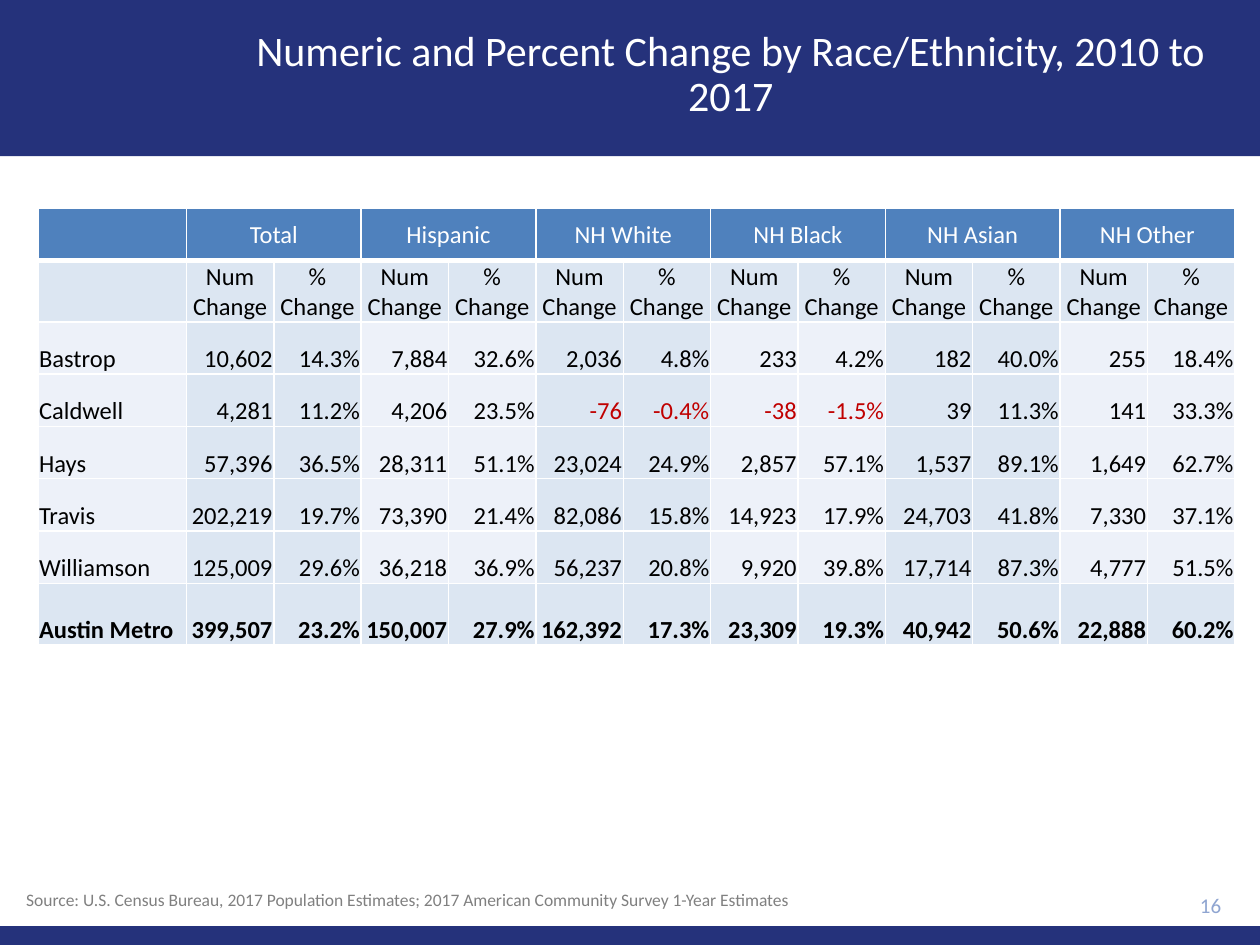
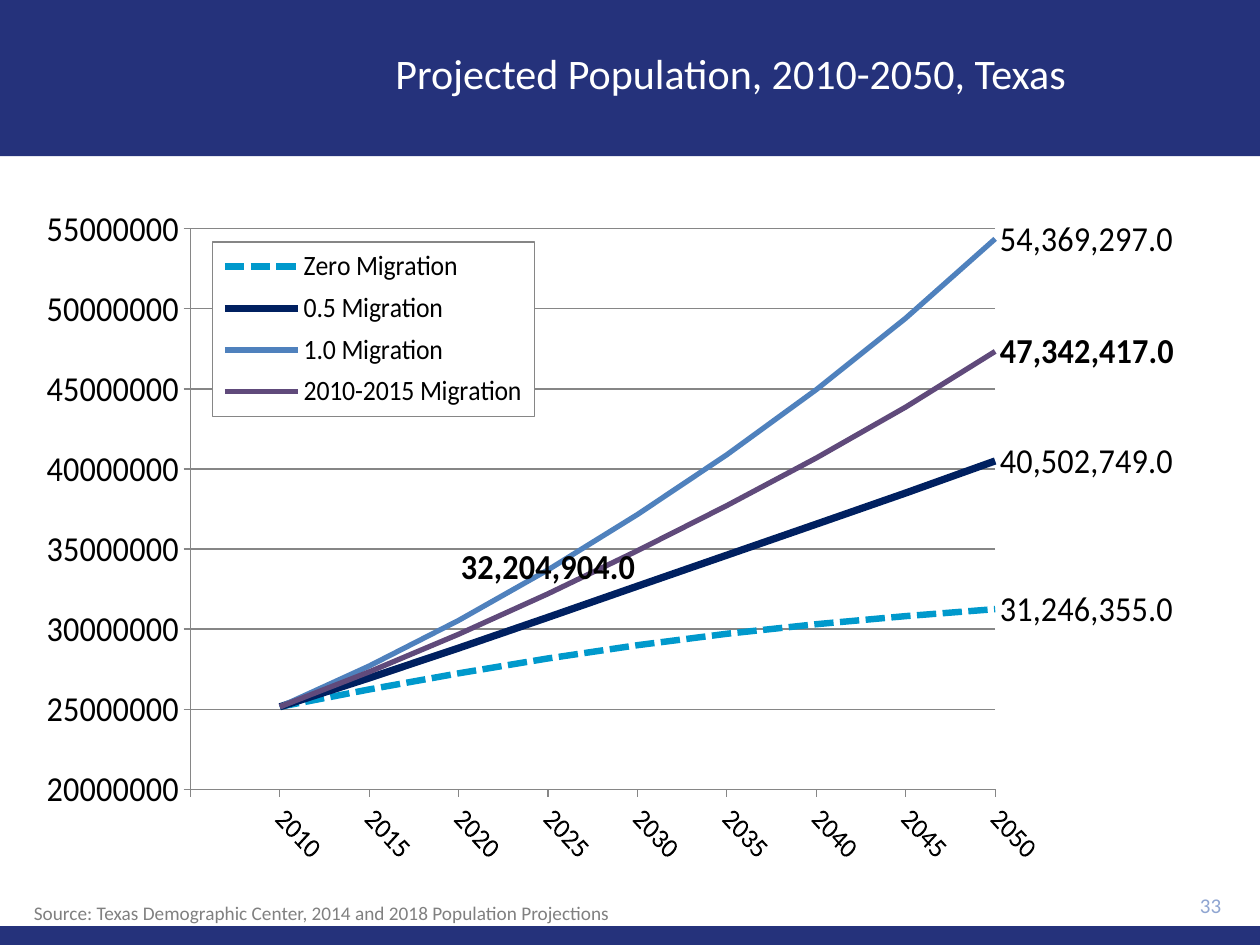
from lxml import etree
from pptx import Presentation
from pptx.chart.data import CategoryChartData
from pptx.dml.color import RGBColor
from pptx.enum import chart as ch, dml, shapes, text
from pptx.oxml import parse_xml
from pptx.oxml.ns import nsdecls, qn
from pptx.util import Inches, Pt

NAVY = RGBColor(0x25, 0x32, 0x7B)
WHITE = RGBColor(0xFF, 0xFF, 0xFF)
BLACK = RGBColor(0, 0, 0)
RED = RGBColor(0xC0, 0, 0)
GREY = RGBColor(0x80, 0x80, 0x80)
AXIS_GREY = RGBColor(0x86, 0x86, 0x86)
NUMBER_BLUE = RGBColor(0x8F, 0xA5, 0xD1)
BLUE = RGBColor(0x4F, 0x81, 0xBD)
PALE = RGBColor(0xDC, 0xE6, 0xF2)
PALER = RGBColor(0xED, 0xF1, 0xF9)
CYAN = RGBColor(0, 0x99, 0xCC)
DARK = RGBColor(0, 0x20, 0x60)
PURPLE = RGBColor(0x60, 0x4A, 0x7B)
FONT = "Calibri"
ALIGN = text.PP_ALIGN
ANCHOR = text.MSO_ANCHOR


def write(p, words, size, color, align=ALIGN.LEFT, bold=False):
    p.alignment = align
    r = p.add_run()
    r.text = words
    r.font.name, r.font.size, r.font.bold = FONT, Pt(size), bold
    r.font.color.rgb = color


def place(before, x, y, w, h, inner=False):
    """Give a chart part a manual layout, put after the element `before`."""
    target = '<c:layoutTarget val="inner"/>' if inner else ""
    values = "".join(f'<c:{tag} val="{v}"/>' for tag, v in zip("xywh", (x, y, w, h)))
    return parse_xml(
        f'<c:layout {nsdecls("c")}><c:manualLayout>{target}<c:xMode val="edge"/>'
        f'<c:yMode val="edge"/>{values}</c:manualLayout></c:layout>'
    ) if before is None else before.addnext(place(None, x, y, w, h, inner))


prs = Presentation()
prs.slide_width, prs.slide_height = Inches(10), Inches(7.5)
layout = prs.slide_layouts[5]

# Titles, sources and page numbers
pages = [
    ("Numeric and Percent Change by Race/Ethnicity, 2010 to 2017", "16",
     "Source: U.S. Census Bureau, 2017 Population Estimates; "
     "2017 American Community Survey 1-Year Estimates", 10, (0.11, 7.01, 6.32, 0.27)),
    ("Projected Population, 2010-2050, Texas", "33",
     "Source: Texas Demographic Center, 2014 and 2018 Population Projections",
     11, (0.17, 7.1, 4.81, 0.29)),
]
for title, number, source, source_size, source_box in pages:
    s = prs.slides.add_slide(layout)
    sp = s.shapes.title
    sp.left, sp.top, sp.width, sp.height = map(Inches, (1.7, 0.1, 8.2, 1))
    tf = sp.text_frame
    tf.vertical_anchor = ANCHOR.MIDDLE
    tf.auto_size = text.MSO_AUTO_SIZE.NONE
    tf.paragraphs[0].line_spacing = 0.9
    write(tf.paragraphs[0], title, 24, WHITE, ALIGN.CENTER)

    tf = s.shapes.add_textbox(*map(Inches, (8.9, 7.01, 0.89, 0.34))).text_frame
    tf.word_wrap = True
    tf.vertical_anchor = ANCHOR.MIDDLE
    write(tf.paragraphs[0], number, 12, NUMBER_BLUE, ALIGN.RIGHT)

    tf = s.shapes.add_textbox(*map(Inches, source_box)).text_frame
    tf.word_wrap = False
    tf.auto_size = text.MSO_AUTO_SIZE.SHAPE_TO_FIT_TEXT
    write(tf.paragraphs[0], source, source_size, GREY)

# Navy bands, moved to the shared layout behind its placeholders
table_slide, chart_slide = prs.slides
for top, height in ((0, 1.24), (7.35, 0.15)):
    sp = table_slide.shapes.add_shape(
        shapes.MSO_SHAPE.RECTANGLE, 0, Inches(top), Inches(10), Inches(height))
    sp.shadow.inherit = False
    sp.fill.solid()
    sp.fill.fore_color.rgb = NAVY
    sp.line.fill.background()
    layout.shapes.element.insert(2, sp.element)

# Table of changes by group
groups = ["Total", "Hispanic", "NH White", "NH Black", "NH Asian", "NH Other"]
header = [""]
for group in groups:
    header += [group, ""]
rows = [
    header,
    [""] + ["Num Change", "% Change"] * len(groups),
    ["Bastrop", "10,602", "14.3%", "7,884", "32.6%", "2,036", "4.8%",
     "233", "4.2%", "182", "40.0%", "255", "18.4%"],
    ["Caldwell", "4,281", "11.2%", "4,206", "23.5%", "-76", "-0.4%",
     "-38", "-1.5%", "39", "11.3%", "141", "33.3%"],
    ["Hays", "57,396", "36.5%", "28,311", "51.1%", "23,024", "24.9%",
     "2,857", "57.1%", "1,537", "89.1%", "1,649", "62.7%"],
    ["Travis", "202,219", "19.7%", "73,390", "21.4%", "82,086", "15.8%",
     "14,923", "17.9%", "24,703", "41.8%", "7,330", "37.1%"],
    ["Williamson", "125,009", "29.6%", "36,218", "36.9%", "56,237", "20.8%",
     "9,920", "39.8%", "17,714", "87.3%", "4,777", "51.5%"],
    ["Austin Metro", "399,507", "23.2%", "150,007", "27.9%", "162,392", "17.3%",
     "23,309", "19.3%", "40,942", "50.6%", "22,888", "60.2%"],
]
last = len(rows) - 1
table = table_slide.shapes.add_table(
    len(rows), len(header), *map(Inches, (0.3, 1.65, 9.5, 3.49))).table
for c, column in enumerate(table.columns):
    column.width = Inches(1.18 if c == 0 else (9.5 - 1.18) / 12)
for i, row in enumerate(table.rows):
    row.height = Inches(0.49 if i in (1, last) else 0.415)

for i, row in enumerate(rows):
    for c, words in enumerate(row):
        cell = table.cell(i, c)
        cell.margin_left = cell.margin_right = cell.margin_top = Inches(0.01)
        cell.margin_bottom = 0
        cell.vertical_anchor = ANCHOR.MIDDLE if i < 2 else ANCHOR.BOTTOM

        # White borders, thick under the header row
        tcPr = cell._tc.get_or_add_tcPr()
        for side in "LRTB":
            thick = (i, side) in ((0, "B"), (1, "T"))
            tcPr.append(parse_xml(
                f'<a:ln{side} {nsdecls("a")} w="{Pt(3 if thick else 1)}"><a:solidFill>'
                f'<a:srgbClr val="{WHITE}"/></a:solidFill></a:ln{side}>'))

        # Groups alternate between two tints
        cell.fill.solid()
        if i == 0:
            cell.fill.fore_color.rgb = BLUE
        elif i in (1, last) or (c + 1) // 2 % 2:
            cell.fill.fore_color.rgb = PALE
        else:
            cell.fill.fore_color.rgb = PALER

        p = cell.text_frame.paragraphs[0]
        if words:
            color = WHITE if i == 0 else RED if words.startswith("-") else BLACK
            align = ALIGN.CENTER if i < 2 else ALIGN.RIGHT if c else ALIGN.LEFT
            write(p, words, 14, color, align, bold=i == last)
        else:
            p.font.size = Pt(14)
for c in range(1, len(header), 2):
    table.cell(0, c).merge(table.cell(0, c + 1))

# Line chart of the migration scenarios: name, colour, width, labelled points, values
scenarios = [
    ("Zero Migration", CYAN, 4, [9],
     [25145561, 26230098, 27238610, 28165689, 28994210,
      29705207, 30305304, 30808219, 31246355]),
    ("0.5 Migration", DARK, 4.5, [9],
     [25145561, 26947116, 28813282, 30734321, 32680217,
      34616890, 36550595, 38499538, 40502749]),
    ("1.0 Migration", BLUE, 3.25, [9],
     [25145561, 27695284, 30541978, 33699307, 37155084,
      40892255, 44955896, 49416165, 54369297]),
    ("2010-2015 Migration", PURPLE, 3.25, [4, 9],
     [25145561, 27326252, 29677772, 32204904, 34894429,
      37716507, 40686490, 43867040, 47342417]),
]
data = CategoryChartData(number_format="#,##0.0")
data.categories = [""] + [str(year) for year in range(2010, 2051, 5)]
for name, _, _, _, values in scenarios:
    data.add_series(name, [None] + values)
chart = chart_slide.shapes.add_chart(
    ch.XL_CHART_TYPE.LINE, *map(Inches, (0.37, 1.17, 8.95, 5.77)), data).chart
chart.has_title = False
chart.font.name, chart.font.size = FONT, Pt(20)
chart.font.color.rgb = BLACK
chart.plots[0].vary_by_categories = False

for series, (name, color, width, labelled, _) in zip(chart.plots[0].series, scenarios):
    series.smooth = False
    series.marker.style = ch.XL_MARKER_STYLE.NONE
    series.format.line.color.rgb = color
    series.format.line.width = Pt(width)
    if color == CYAN:
        series.format.line.dash_style = dml.MSO_LINE.SQUARE_DOT
    series.data_labels.show_value = False
    for index in labelled:
        label = series.points[index].data_label
        label.font.name, label.font.size = FONT, Pt(20)
        label.font.bold = color == PURPLE
        label.font.color.rgb = BLACK
        label.position = (ch.XL_LABEL_POSITION.RIGHT if index == 9
                          else ch.XL_LABEL_POSITION.ABOVE)

# Axes
years, people = chart.category_axis, chart.value_axis
for axis in (years, people):
    axis.major_tick_mark = ch.XL_TICK_MARK.OUTSIDE
    axis.format.line.color.rgb = AXIS_GREY
years.tick_labels.font.size = Pt(16)
years._element.find(qn("c:txPr")).find(qn("a:bodyPr")).set("rot", "2700000")
people.minimum_scale, people.maximum_scale = 20000000, 55000000
people.major_unit = 5000000
people.tick_labels.number_format = "0"
people.tick_labels.number_format_is_linked = False
people.has_major_gridlines = True
people.major_gridlines.format.line.color.rgb = AXIS_GREY

# Lines start on the tick marks
for old in people._element.findall(qn("c:crossBetween")):
    people._element.remove(old)
people._element.find(qn("c:crosses")).addnext(
    parse_xml(f'<c:crossBetween {nsdecls("c")} val="midCat"/>'))

# Legend and plot area positions
chart.has_legend = True
legend = chart.legend
legend.position = ch.XL_LEGEND_POSITION.LEFT
legend.include_in_layout = True
legend.font.size = Pt(16)
box = legend._element
plot_area = chart._chartSpace.chart.plotArea
for part in (box, plot_area):
    for old in part.findall(qn("c:layout")):
        part.remove(old)
place(box.find(qn("c:legendPos")), 0.15, 0.13, 0.31, 0.24)
plot_area.insert(0, place(None, 0.129, 0.112, 0.775, 0.771, inner=True))
frame = parse_xml(
    f'<c:spPr {nsdecls("c", "a")}><a:solidFill><a:srgbClr val="{WHITE}"/></a:solidFill>'
    f'<a:ln w="{Pt(0.75)}"/></c:spPr>')
line_fill = etree.SubElement(frame.find(qn("a:ln")), qn("a:solidFill"))
etree.SubElement(line_fill, qn("a:srgbClr")).set("val", str(AXIS_GREY))
box.find(qn("c:overlay")).addnext(frame)

prs.save("out.pptx")
